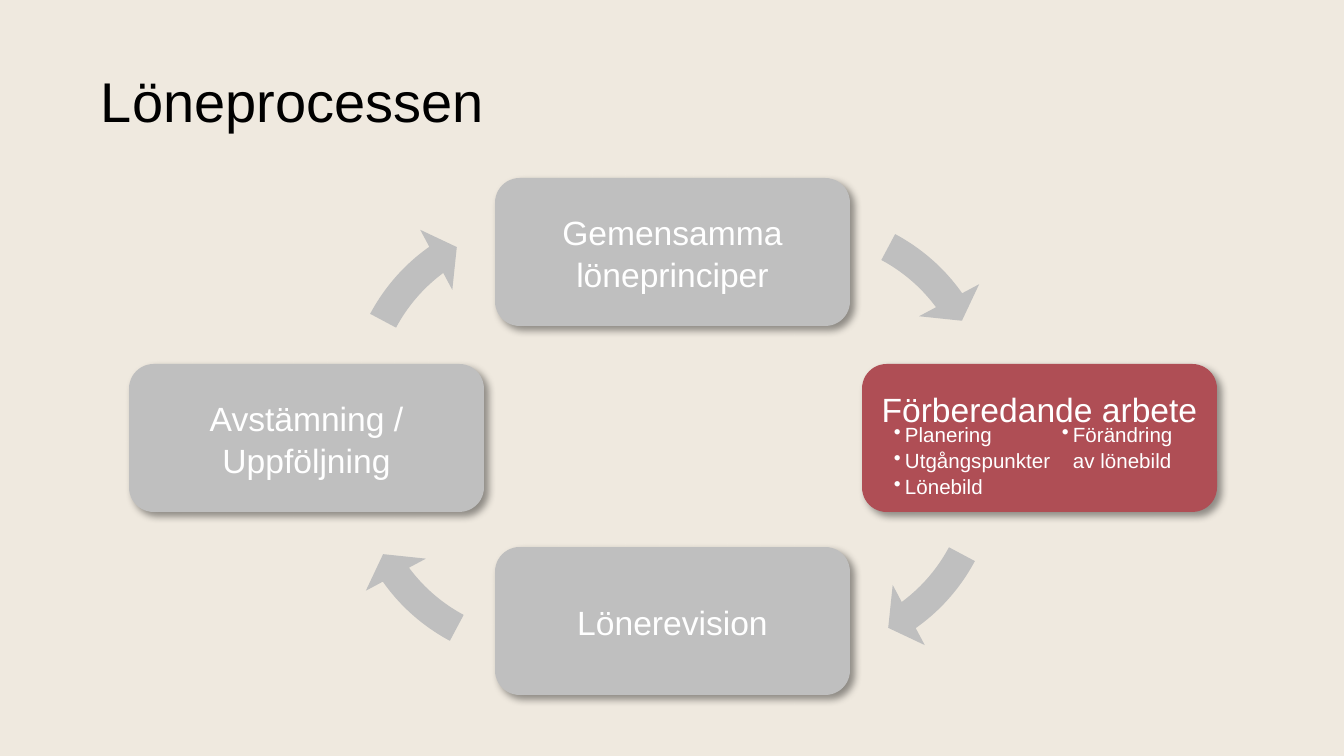
from lxml import etree
from pptx import Presentation
from pptx.dml.color import RGBColor
from pptx.enum.shapes import MSO_SHAPE
from pptx.enum.text import MSO_ANCHOR, PP_ALIGN
from pptx.oxml.ns import qn
from pptx.util import Emu, Pt

ROUNDED = MSO_SHAPE.ROUNDED_RECTANGLE
CIRCULAR_ARROW = MSO_SHAPE.CIRCULAR_ARROW
TOP, MIDDLE = MSO_ANCHOR.TOP, MSO_ANCHOR.MIDDLE
LEFT, CENTER = PP_ALIGN.LEFT, PP_ALIGN.CENTER

CREAM = RGBColor(0xEF, 0xE9, 0xDF)
GRAY = RGBColor(0xBF, 0xBF, 0xBF)
RED = RGBColor(0xAF, 0x4E, 0x55)
WHITE = RGBColor(0xFF, 0xFF, 0xFF)
BLACK = RGBColor(0x00, 0x00, 0x00)

FONT = "Arial"
SCALE = 914400 / 134.4
STEP_W, STEP_H = 355, 148
BULLET_INDENT = 11


def px(length):
    return Emu(round(length * SCALE))


def place(box):
    return [px(length) for length in box]


def setup_frame(frame, anchor, top_inset=0):
    frame.word_wrap = True
    frame.vertical_anchor = anchor
    frame.margin_left = frame.margin_right = frame.margin_bottom = 0
    frame.margin_top = px(top_inset)


def add_line(paragraph, text, size, color, align=LEFT, spacing=1.05):
    paragraph.alignment = align
    paragraph.line_spacing = spacing
    run = paragraph.add_run()
    run.text = text
    run.font.name = FONT
    run.font.size = Pt(size)
    run.font.color.rgb = color


def add_bullet(paragraph):
    properties = paragraph._p.get_or_add_pPr()
    properties.set("marL", str(px(BULLET_INDENT)))
    properties.set("indent", str(-px(BULLET_INDENT)))
    etree.SubElement(properties, qn("a:buChar"), char="•")


def cast_shadow(shape):
    effects = shape._element.spPr.find(qn("a:effectLst"))
    shadow = etree.SubElement(
        effects, qn("a:outerShdw"), blurRad=str(Pt(4)), dist=str(Pt(3)),
        dir=str(45 * 60000), algn="tl", rotWithShape="0")
    color = etree.SubElement(shadow, qn("a:srgbClr"), val=str(BLACK))
    etree.SubElement(color, qn("a:alpha"), val="40000")


def add_filled(slide, kind, box, fill):
    shape = slide.shapes.add_shape(kind, *place(box))
    shape.shadow.inherit = False
    shape.fill.solid()
    shape.fill.fore_color.rgb = fill
    shape.line.fill.background()
    return shape


def add_title(slide, box, text):
    title = slide.shapes.add_textbox(*place(box))
    setup_frame(title.text_frame, MIDDLE)
    add_line(title.text_frame.paragraphs[0], text, 30, BLACK, spacing=0.9)


def add_step(slide, box, text, fill=GRAY, anchor=MIDDLE, top_inset=0):
    step = add_filled(slide, ROUNDED, box, fill)
    cast_shadow(step)
    setup_frame(step.text_frame, anchor, top_inset)
    add_line(step.text_frame.paragraphs[0], text, 18, WHITE, CENTER)


def add_bullet_list(slide, box, items):
    bullets = slide.shapes.add_textbox(*place(box))
    frame = bullets.text_frame
    setup_frame(frame, TOP)
    for index, item in enumerate(items):
        paragraph = frame.add_paragraph() if index else frame.paragraphs[0]
        paragraph.line_spacing = 1.05
        add_bullet(paragraph)
        add_line(paragraph, item, 11, WHITE)


def add_preparation_step(slide, box):
    left, top, width, height = box
    add_step(slide, box, "Förberedande arbete", RED, TOP, 16)
    add_bullet_list(slide, (left + 32, top + 57, 160, 66),
                    ["Planering", "Utgångspunkter", "Lönebild"])
    add_bullet_list(slide, (left + 200, top + 57, 125, 83),
                    ["Förändring av lönebild"])


def add_cycle_arrows(slide, box):
    left, top, width, height = box
    size = 426
    right, bottom = left + width - size, top + height - size
    corners = [(left, top), (right, top), (right, bottom), (left, bottom)]
    quarter, full_turn = 54, 216
    for turn, (x, y) in enumerate(corners):
        arrow = add_filled(slide, CIRCULAR_ARROW, (x, y, size, size), GRAY)
        arrow.rotation = 45
        head = (113.508 + turn * quarter) % full_turn
        tail = (97.841 + turn * quarter) % full_turn
        for index, value in enumerate((0.069, 4.65, head, tail, 0.08)):
            arrow.adjustments[index] = value


def add_cycle(slide, box):
    left, top, width, height = box
    middle_x = left + (width - STEP_W) // 2
    right_x = left + width - STEP_W
    middle_y = top + 186
    bottom_y = top + height - STEP_H
    add_step(slide, (left, middle_y, STEP_W, STEP_H), "Avstämning / Uppföljning")
    add_step(slide, (middle_x, bottom_y, STEP_W, STEP_H), "Lönerevision")
    add_step(slide, (middle_x, top, STEP_W, STEP_H), "Gemensamma löneprinciper")
    add_preparation_step(slide, (right_x, middle_y, STEP_W, STEP_H))
    add_cycle_arrows(slide, (left + 199, top + 14, 689, 491))


def main():
    deck = Presentation()
    deck.slide_width, deck.slide_height = px(1344), px(756)
    slide = deck.slides.add_slide(deck.slide_layouts[6])
    slide.background.fill.solid()
    slide.background.fill.fore_color.rgb = CREAM
    add_title(slide, (101, 31, 1099, 146), "Löneprocessen")
    add_cycle(slide, (129, 178, 1088, 517))
    deck.save("out.pptx")


if __name__ == "__main__":
    main()
